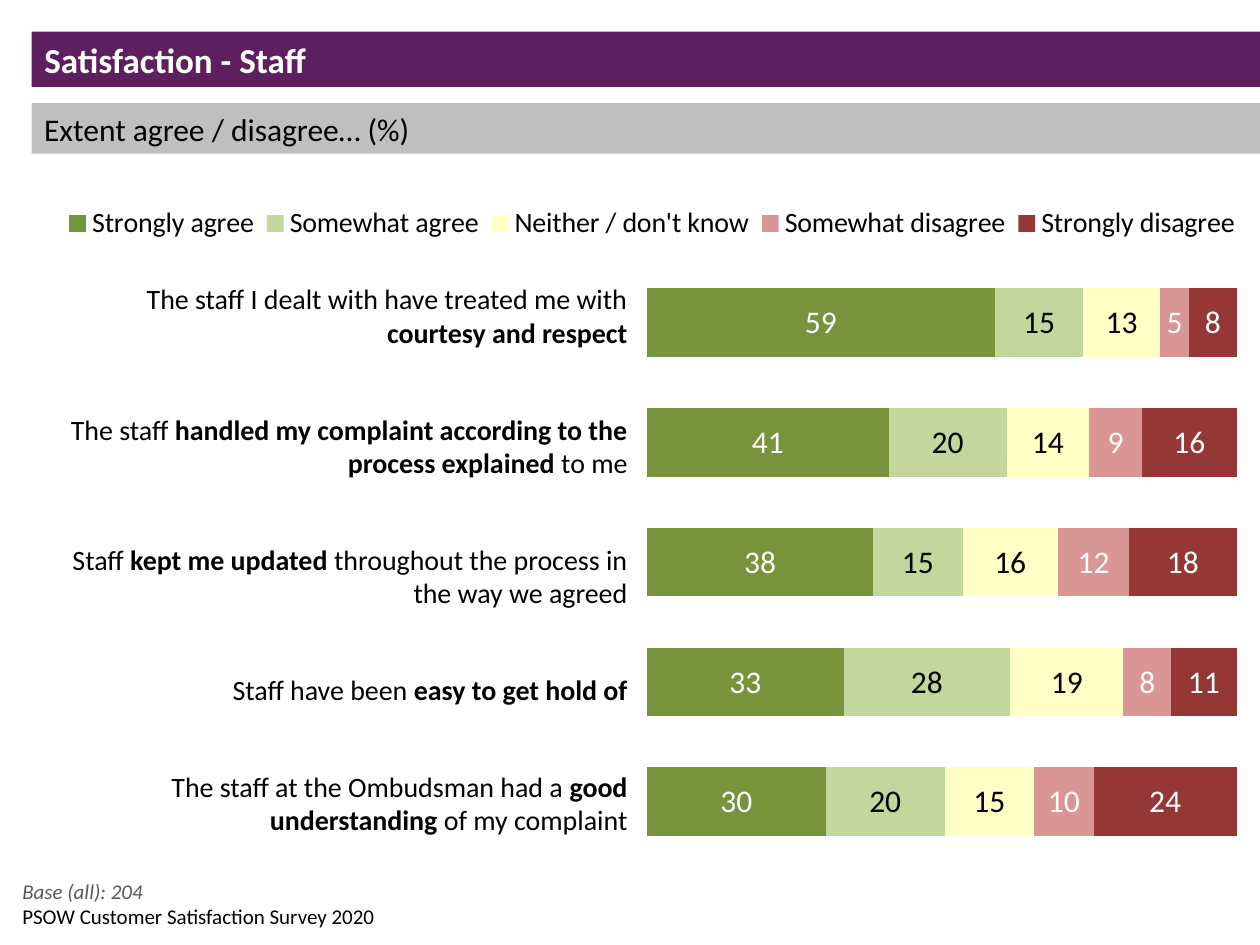
from typing import NamedTuple

from lxml.etree import SubElement
from pptx import Presentation
from pptx.chart.data import CategoryChartData
from pptx.dml.color import RGBColor
from pptx.enum.chart import XL_CHART_TYPE, XL_LEGEND_POSITION
from pptx.enum.shapes import MSO_SHAPE
from pptx.enum.text import MSO_ANCHOR, PP_ALIGN
from pptx.oxml.ns import qn
from pptx.util import Cm, Pt

FONT = "Calibri"
BLACK = RGBColor(0x00, 0x00, 0x00)
WHITE = RGBColor(0xFF, 0xFF, 0xFF)
PURPLE = RGBColor(0x5D, 0x1F, 0x5E)
BAND_GREY = RGBColor(0xBF, 0xBF, 0xBF)
NOTE_GREY = RGBColor(0x59, 0x59, 0x59)
GREEN = RGBColor(0x77, 0x93, 0x3C)
PALE_GREEN = RGBColor(0xC3, 0xD6, 0x9B)
PALE_YELLOW = RGBColor(0xFE, 0xFF, 0xC5)
PINK = RGBColor(0xD9, 0x96, 0x94)
DARK_RED = RGBColor(0x95, 0x37, 0x35)


class Box(NamedTuple):
    """Left, top, width and height in centimetres."""
    left: float
    top: float
    width: float
    height: float


class Answer(NamedTuple):
    name: str
    shares: tuple[int, ...]
    fill: RGBColor
    label_color: RGBColor


class Phrase(NamedTuple):
    text: str
    bold: bool = False


ANSWERS = (
    Answer("Strongly agree", (59, 41, 38, 33, 30), GREEN, WHITE),
    Answer("Somewhat agree", (15, 20, 15, 28, 20), PALE_GREEN, BLACK),
    Answer("Neither / don't know", (13, 14, 16, 19, 15), PALE_YELLOW, BLACK),
    Answer("Somewhat disagree", (5, 9, 12, 8, 10), PINK, WHITE),
    Answer("Strongly disagree", (8, 16, 18, 11, 24), DARK_RED, WHITE),
)

STATEMENTS = (
    (Phrase("The staff I dealt with have treated me with "),
     Phrase("courtesy and respect", True)),
    (Phrase("The staff "),
     Phrase("handled my complaint according to the process explained ", True),
     Phrase("to me")),
    (Phrase("Staff "), Phrase("kept me updated ", True),
     Phrase("throughout the process in the way we agreed")),
    (Phrase("Staff have been "), Phrase("easy to get hold of", True)),
    (Phrase("The staff at the Ombudsman had a "),
     Phrase("good understanding ", True), Phrase("of my complaint")),
)


def set_font(font, size: float, color: RGBColor) -> None:
    font.name = FONT
    font.size = Pt(size)
    font.color.rgb = color


def place(box: Box) -> tuple:
    return tuple(Cm(length) for length in box)


def format_band(band, box: Box, text: str, fill: RGBColor,
                size: float, color: RGBColor, bold: bool) -> None:
    band.left, band.top, band.width, band.height = place(box)
    band.fill.solid()
    band.fill.fore_color.rgb = fill
    band.line.fill.background()
    frame = band.text_frame
    frame.text = text
    frame.word_wrap = True
    frame.vertical_anchor = MSO_ANCHOR.MIDDLE
    paragraph = frame.paragraphs[0]
    paragraph.alignment = PP_ALIGN.LEFT
    set_font(paragraph.font, size, color)
    paragraph.font.bold = bold


def add_note(slide, box: Box, text: str, color: RGBColor, italic: bool) -> None:
    frame = slide.shapes.add_textbox(*place(box)).text_frame
    frame.word_wrap = True
    frame.text = text
    font = frame.paragraphs[0].font
    set_font(font, 12, color)
    font.italic = italic


def add_statements(slide, box: Box) -> None:
    frame = slide.shapes.add_textbox(*place(box)).text_frame
    frame.word_wrap = True
    for index, phrases in enumerate(STATEMENTS):
        paragraph = frame.add_paragraph() if index else frame.paragraphs[0]
        paragraph.alignment = PP_ALIGN.RIGHT
        if index:
            paragraph.space_before = Pt(36)
        set_font(paragraph.font, 16, BLACK)
        for phrase in phrases:
            run = paragraph.add_run()
            run.text = phrase.text
            run.font.bold = phrase.bold


def set_layout(parent, index: int, inner: bool, area: Box) -> None:
    """Fix a chart part's area, given in fractions of the chart."""
    for old in parent.findall(qn("c:layout")):
        parent.remove(old)
    layout = SubElement(parent, qn("c:layout"))
    parent.insert(index, layout)
    manual = SubElement(layout, qn("c:manualLayout"))
    settings = [("layoutTarget", "inner")] if inner else []
    settings += [("xMode", "edge"), ("yMode", "edge")]
    settings += zip("xywh", area)
    for tag, value in settings:
        SubElement(manual, qn(f"c:{tag}")).set("val", str(value))


def add_answer_chart(slide, box: Box) -> None:
    data = CategoryChartData()
    data.categories = [str(n) for n in range(1, len(STATEMENTS) + 1)]
    for answer in ANSWERS:
        data.add_series(answer.name, answer.shares)
    chart = slide.shapes.add_chart(
        XL_CHART_TYPE.BAR_STACKED_100, *place(box), data).chart
    set_font(chart.font, 18, BLACK)
    chart.has_title = False
    chart.category_axis.visible = False
    chart.category_axis.reverse_order = True
    chart.value_axis.visible = False
    chart.value_axis.has_major_gridlines = False

    plot = chart.plots[0]
    plot.gap_width = 75
    plot.overlap = 100
    plot.vary_by_categories = False
    for series, answer in zip(plot.series, ANSWERS):
        series.format.fill.solid()
        series.format.fill.fore_color.rgb = answer.fill
        labels = series.data_labels
        labels.show_value = True
        set_font(labels.font, 18, answer.label_color)

    chart.has_legend = True
    legend = chart.legend
    legend.position = XL_LEGEND_POSITION.TOP
    legend.include_in_layout = False
    set_font(legend.font, 16, BLACK)
    plot_area = chart.element.find(".//" + qn("c:plotArea"))
    set_layout(plot_area, 0, True, Box(0.5, 0.12, 0.48, 0.85))
    plot_layout = Box(0.501, 0.116, 0.48, 0.855)
    set_layout(plot_area, 0, True, plot_layout)
    legend_part = chart.element.find(".//" + qn("c:legend"))
    set_layout(legend_part, 1, False, Box(0.02, 0.02, 0.97, 0.08))


def main() -> None:
    presentation = Presentation()
    presentation.slide_width, presentation.slide_height = Cm(25.4), Cm(19.05)
    slide = presentation.slides.add_slide(presentation.slide_layouts[5])

    format_band(slide.shapes.title, Box(0.64, 0.64, 24.76, 1.11),
                "Satisfaction - Staff", PURPLE, 20, WHITE, True)
    question_box = Box(0.64, 2.08, 24.76, 1.02)
    question = slide.shapes.add_shape(MSO_SHAPE.RECTANGLE, *place(question_box))
    question.shadow.inherit = False
    format_band(question, question_box, "Extent agree / disagree… (%)",
                BAND_GREY, 18, BLACK, False)

    add_answer_chart(slide, Box(0.64, 3.66, 24.76, 14.12))
    add_statements(slide, Box(0.84, 5.56, 12.06, 11.53))
    add_note(slide, Box(0.2, 17.58, 18.42, 0.76), "Base (all): 204",
             NOTE_GREY, True)
    add_note(slide, Box(0.2, 18.09, 13.34, 0.76),
             "PSOW Customer Satisfaction Survey 2020", BLACK, False)
    presentation.save("out.pptx")


if __name__ == "__main__":
    main()
